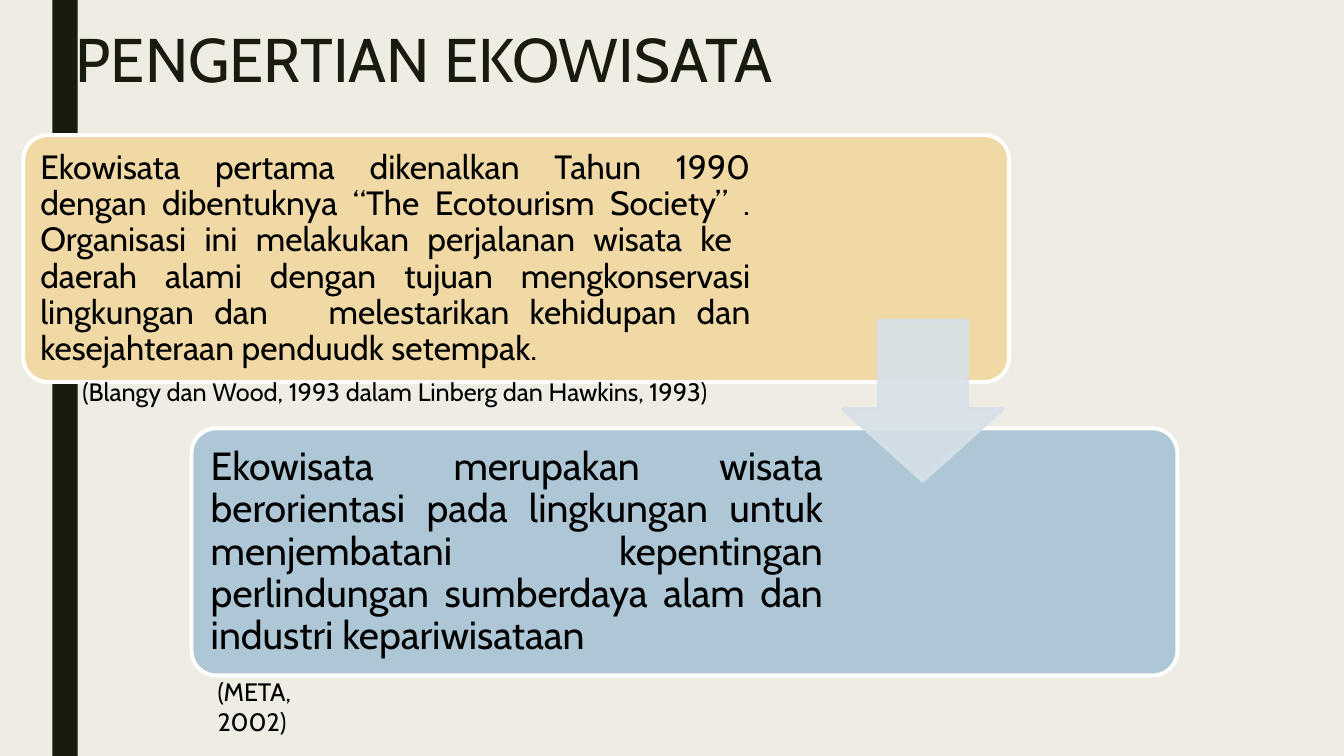
import pptx
import pptx.util
import pptx.dml.color
import pptx.enum.shapes
import pptx.enum.text
import pptx.oxml
import pptx.oxml.ns

RGB = pptx.dml.color.RGBColor
CREAM = RGB(0xEF, 0xED, 0xE3)
DARK = RGB(0x19, 0x1B, 0x0E)
SAND = RGB(0xF0, 0xD9, 0xA5)
BLUE = RGB(0xAD, 0xC7, 0xD6)
PALE = RGB(0xD6, 0xE0, 0xE7)
WHITE = RGB(0xFF, 0xFF, 0xFF)
BLACK = RGB(0, 0, 0)
SHAPE = pptx.enum.shapes.MSO_SHAPE
ALIGN = pptx.enum.text.PP_ALIGN
ANCHOR = pptx.enum.text.MSO_ANCHOR

prs = pptx.Presentation()
prs.slide_width = pptx.util.Inches(13.33)
prs.slide_height = pptx.util.Inches(7.5)
COL, ROW = prs.slide_width / 100, prs.slide_height / 100
s = prs.slides.add_slide(prs.slide_layouts[5])
s.background.fill.solid()
s.background.fill.fore_color.rgb = CREAM


def add_block(kind, x, y, w, h, fill, line=None):
    """Add a filled shape, placed in hundredths of the slide's size."""
    sp = s.shapes.add_shape(kind, int(x * COL), int(y * ROW), int(w * COL), int(h * ROW))
    sp.shadow.inherit = False
    sp.fill.solid()
    sp.fill.fore_color.rgb = fill
    if line is None:
        sp.line.fill.background()
    else:
        sp.line.color.rgb = line
        sp.line.width = pptx.util.Pt(2.75)
    return sp


def write(sp, box, text, size, color=BLACK, inset=0.1, anchor=ANCHOR.TOP,
          align=ALIGN.LEFT, spacing=1.0):
    """Place a text shape in hundredths of the slide's size and set its text."""
    x, y, w, h = box
    sp.left, sp.top = int(x * COL), int(y * ROW)
    sp.width, sp.height = int(w * COL), int(h * ROW)
    tf = sp.text_frame
    side, edge = pptx.util.Inches(inset), pptx.util.Inches(inset if inset > 0.1 else inset / 2)
    frame = {"word_wrap": True, "auto_size": pptx.enum.text.MSO_AUTO_SIZE.NONE,
             "vertical_anchor": anchor, "margin_left": side, "margin_right": side,
             "margin_top": edge, "margin_bottom": edge}
    for name, value in frame.items():
        setattr(tf, name, value)
    p = tf.paragraphs[0]
    p.alignment, p.line_spacing = align, spacing
    r = p.add_run()
    r.text = text
    for name, value in {"name": "Cabin", "size": pptx.util.Pt(size)}.items():
        setattr(r.font, name, value)
    r.font.color.rgb = color


# Side bar goes behind the title
bar = add_block(SHAPE.RECTANGLE, 3.9, 0, 1.88, 100, DARK)
title = s.shapes.title
title._element.addprevious(bar._element)
write(title, (4.88, 3.33, 78.75, 21.6), "PENGERTIAN EKOWISATA", 44, DARK, spacing=0.89)

# Two stepped cards
cards = [
    (1.73, 17.87, SAND, 54.3, 24, 0.1,
     "Ekowisata pertama dikenalkan Tahun 1990 dengan dibentuknya “The Ecotourism Society” . "
     "Organisasi ini melakukan perjalanan wisata ke  daerah alami dengan tujuan "
     "mengkonservasi lingkungan dan   melestarikan kehidupan dan kesejahteraan "
     "penduudk setempak."),
    (14.25, 56.67, BLUE, 47.33, 28, 0.12,
     "Ekowisata merupakan wisata berorientasi pada lingkungan untuk menjembatani "
     "kepentingan perlindungan sumberdaya alam dan industri kepariwisataan"),
]
for x, y, fill, text_w, size, inset, text in cards:
    card = add_block(SHAPE.ROUNDED_RECTANGLE, x, y, 73.35, 32.67, fill, WHITE)
    card.adjustments[0] = 0.1
    write(s.shapes.add_textbox(0, 0, 0, 0), (x + 0.53, y + 1, text_w, 30.8), text, size,
          inset=inset, anchor=ANCHOR.MIDDLE, align=ALIGN.JUSTIFY, spacing=0.9)

# Translucent arrow between the cards
arrow = add_block(SHAPE.DOWN_ARROW, 62.7, 42.4, 11.93, 21.2, PALE, PALE)
arrow.adjustments[0], arrow.adjustments[1] = 0.55, 0.45
for color in arrow._element.spPr.iter(pptx.oxml.ns.qn("a:srgbClr")):
    color.append(pptx.oxml.parse_xml(
        '<a:alpha xmlns:a="http://schemas.openxmlformats.org/drawingml/2006/main" val="90000"/>'))

# Sources
sources = [
    ((15.45, 88.8, 12.38, 5.33), "(META, 2002)"),
    ((5.4, 49.07, 49.73, 5.33), "(Blangy dan Wood, 1993 dalam Linberg dan Hawkins, 1993)"),
]
for box, text in sources:
    write(s.shapes.add_textbox(0, 0, 0, 0), box, text, 18)

prs.save("out.pptx")
